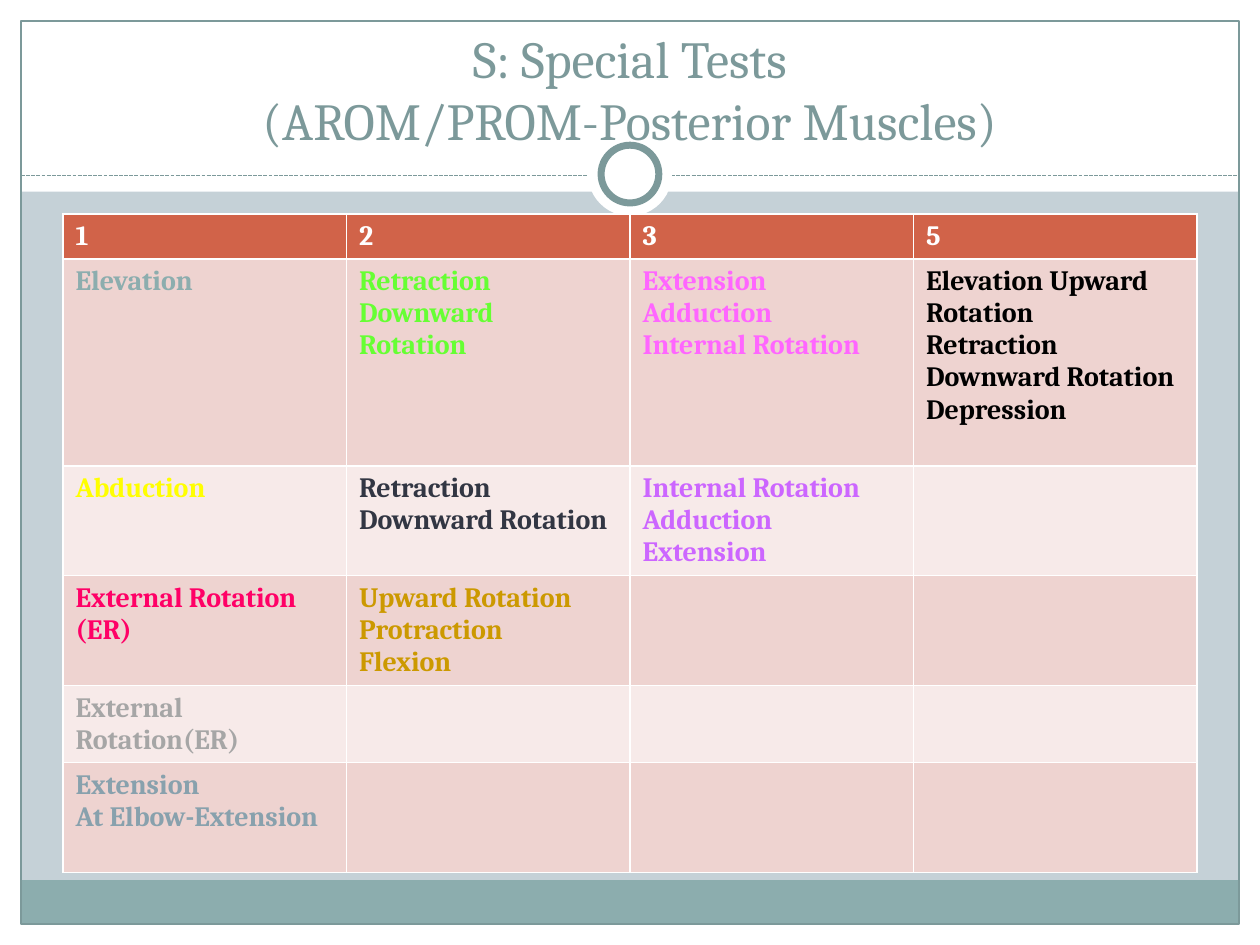
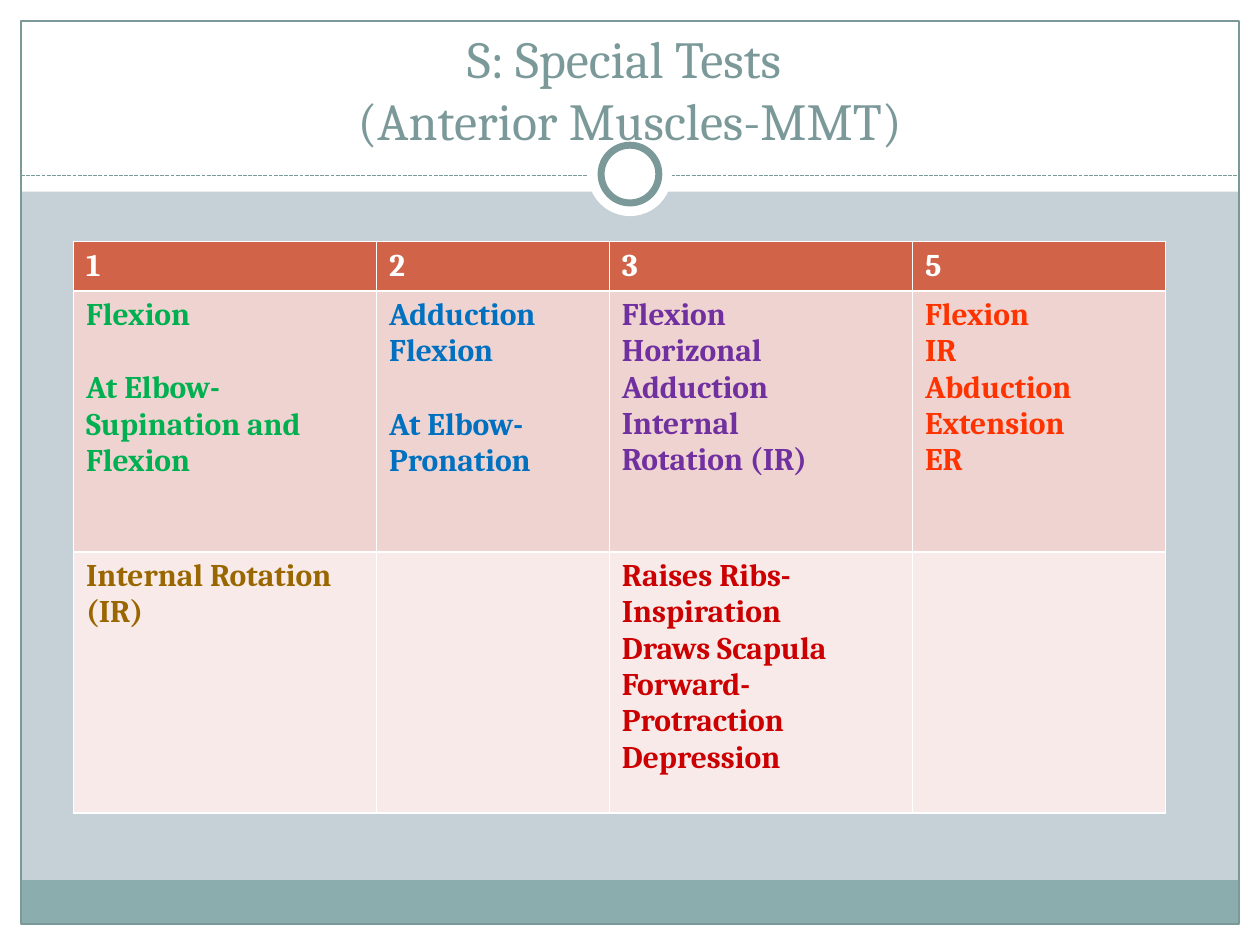
import pptx
import pptx.dml.color
import pptx.enum.dml
import pptx.enum.shapes
import pptx.enum.text
import pptx.oxml.ns
import pptx.util
from lxml import etree

Pt = pptx.util.Pt
SHAPE = pptx.enum.shapes.MSO_SHAPE

FONT = "Cambria"
WIDTH, HEIGHT = 720, 540
MARGIN = 12
COLORS = {
    "white": "FFFFFF", "backdrop": "C5D1D7", "band": "8CADAE", "accent": "7C999A",
    "header": "D16349", "odd_row": "EED3D0", "even_row": "F7EAE9",
    "teal": "8CADAE", "lime": "66FF33", "pink": "FF66FF", "black": "000000",
    "yellow": "FFFF00", "navy": "323643", "lilac": "CC66FF", "rose": "FF0066",
    "gold": "CC9900", "gray": "A6A6A6", "steel": "88A1AD", "green": "00B050",
    "blue": "0070C0", "purple": "7030A0", "orange": "FF3300", "brown": "996600",
    "red": "CC0000",
}

# Each cell is (color, lines); an empty line stands for a gap of one line
HEADINGS = [("white", [number]) for number in "1235"]
POSTERIOR_ROWS = [
    HEADINGS,
    [("teal", ["Elevation"]),
     ("lime", ["Retraction", "Downward", "Rotation"]),
     ("pink", ["Extension", "Adduction", "Internal Rotation"]),
     ("black", ["Elevation Upward Rotation", "Retraction", "Downward Rotation", "Depression"])],
    [("yellow", ["Abduction"]),
     ("navy", ["Retraction", "Downward Rotation"]),
     ("lilac", ["Internal Rotation", "Adduction", "Extension"])],
    [("rose", ["External Rotation (ER)"]),
     ("gold", ["Upward Rotation", "Protraction", "Flexion"])],
    [("gray", ["External Rotation(ER)"])],
    [("steel", ["Extension", "At Elbow-Extension"])],
]
ANTERIOR_ROWS = [
    HEADINGS,
    [("green", ["Flexion", "", "At Elbow-Supination and Flexion"]),
     ("blue", ["Adduction", "Flexion", "", "At Elbow-Pronation"]),
     ("purple", ["Flexion", "Horizonal Adduction", "Internal", "Rotation (IR)"]),
     ("orange", ["Flexion", "IR", "Abduction", "Extension", "ER"])],
    [("brown", ["Internal Rotation (IR)"]),
     None,
     ("red", ["Raises Ribs-Inspiration", "Draws Scapula Forward-Protraction", "Depression"])],
]


def rgb(name):
    return pptx.dml.color.RGBColor.from_string(COLORS[name])


def paint(fill, color):
    fill.solid()
    fill.fore_color.rgb = rgb(color)


def write(para, text, size, color, bold=False, align=None, gap=0):
    """Fill a paragraph with text and format it."""
    para.text = text
    para.alignment = align
    para.space_before = Pt(gap)
    for span in para.runs:
        span.font.name = FONT
        span.font.size = Pt(size)
        span.font.bold = bold
        span.font.color.rgb = rgb(color)


def add_box(page, preset, left, top, width, height, fill=None, line=None, weight=0.75):
    box = page.shapes.add_shape(preset, Pt(left), Pt(top), Pt(width), Pt(height))
    box.shadow.inherit = False
    if fill:
        paint(box.fill, fill)
    else:
        box.fill.background()
    if line:
        box.line.color.rgb = rgb(line)
        box.line.width = Pt(weight)
    else:
        box.line.fill.background()
    return box


def add_ring(page, diameter, **style):
    return add_box(page, SHAPE.OVAL, (WIDTH - diameter) / 2, 99.5 - diameter / 2,
                   diameter, diameter, **style)


def add_dashed_rule(page, top):
    rule = page.shapes.add_connector(pptx.enum.shapes.MSO_CONNECTOR.STRAIGHT,
                                     Pt(MARGIN), Pt(top), Pt(WIDTH - MARGIN), Pt(top))
    rule.line.color.rgb = rgb("accent")
    rule.line.width = Pt(0.75)
    rule.line.dash_style = pptx.enum.dml.MSO_LINE.SQUARE_DOT
    etree.SubElement(rule.element.spPr, pptx.oxml.ns.qn("a:effectLst"))
    return rule


def decorate_layout(layout, page):
    """Draw the shared frame on a page, then move it to the layout."""
    paint(layout.background.fill, "backdrop")
    inner = WIDTH - 2 * MARGIN
    bar = SHAPE.RECTANGLE
    parts = [
        # White margins and title area
        add_box(page, bar, 0, HEIGHT - MARGIN, WIDTH, MARGIN, fill="white"),
        add_box(page, bar, 0, 0, WIDTH, 109.5, fill="white"),
        add_box(page, bar, 0, 0, MARGIN, HEIGHT, fill="white"),
        add_box(page, bar, WIDTH - MARGIN, 0, MARGIN, HEIGHT, fill="white"),
        # Footer band and outline
        add_box(page, bar, MARGIN, 503, inner, 25, fill="band"),
        add_box(page, bar, MARGIN, MARGIN, inner, HEIGHT - 2 * MARGIN, line="accent"),
        # Rule with the ring on it
        add_dashed_rule(page, 100.5),
        add_ring(page, 48, fill="white"),
        add_ring(page, 33, fill="white", line="accent", weight=4),
    ]
    for part in parts:
        layout.shapes.element.append(part.element)


def set_title(page, text):
    title = page.shapes.title
    title.left, title.top, title.width, title.height = Pt(24), Pt(18), Pt(672), Pt(72)
    frame = title.text_frame
    frame.word_wrap = True
    frame.auto_size = pptx.enum.text.MSO_AUTO_SIZE.NONE
    frame.vertical_anchor = pptx.enum.text.MSO_ANCHOR.BOTTOM
    write(frame.paragraphs[0], text, 29.7, "accent", align=pptx.enum.text.PP_ALIGN.CENTER)


def set_borders(cell):
    """Put a white line on all four sides; lines go before the fill."""
    properties = cell._tc.get_or_add_tcPr()
    for place, side in enumerate(("lnL", "lnR", "lnT", "lnB")):
        line = etree.Element(pptx.oxml.ns.qn("a:" + side), w=str(Pt(1)))
        fill = etree.SubElement(line, pptx.oxml.ns.qn("a:solidFill"))
        etree.SubElement(fill, pptx.oxml.ns.qn("a:srgbClr"), val=COLORS["white"])
        properties.insert(place, line)


def fill_cell(cell, color, lines, size):
    frame = cell.text_frame
    gap = 0
    first = True
    for text in lines:
        if not text:
            gap = size * 1.17
            continue
        para = frame.paragraphs[0] if first else frame.add_paragraph()
        write(para, text, size, color, bold=True, gap=gap)
        first, gap = False, 0


def add_muscle_table(page, left, top, widths, heights, rows, size):
    table = page.shapes.add_table(len(heights), len(widths), Pt(left), Pt(top),
                                  Pt(sum(widths)), Pt(sum(heights))).table
    for column, width in zip(table.columns, widths):
        column.width = Pt(width)
    for number, (row, height, contents) in enumerate(zip(table.rows, heights, rows)):
        row.height = Pt(height)
        shade = "header" if number == 0 else "odd_row" if number % 2 else "even_row"
        for cell in row.cells:
            paint(cell.fill, shade)
            set_borders(cell)
        for cell, content in zip(row.cells, contents):
            if content:
                fill_cell(cell, *content, size)


def main():
    deck = pptx.Presentation()
    deck.slide_width, deck.slide_height = Pt(WIDTH), Pt(HEIGHT)
    layout = deck.slide_layouts.get_by_name("Title Only")

    # Posterior muscles
    page = deck.slides.add_slide(layout)
    decorate_layout(layout, page)
    set_title(page, "S: Special Tests\v(AROM/PROM-Posterior Muscles)")
    add_muscle_table(page, 36, 122.4, [162] * 4, [25.2, 118.2, 62.8, 62.8, 44, 62.8],
                     POSTERIOR_ROWS, 16)

    # Anterior muscles
    page = deck.slides.add_slide(layout)
    set_title(page, "S: Special Tests \v(Anterior Muscles-MMT)")
    add_muscle_table(page, 42, 138, [173.2, 133, 173.2, 144.6], [28.2, 149.2, 149.2],
                     ANTERIOR_ROWS, 18)

    deck.save("out.pptx")


if __name__ == "__main__":
    main()
